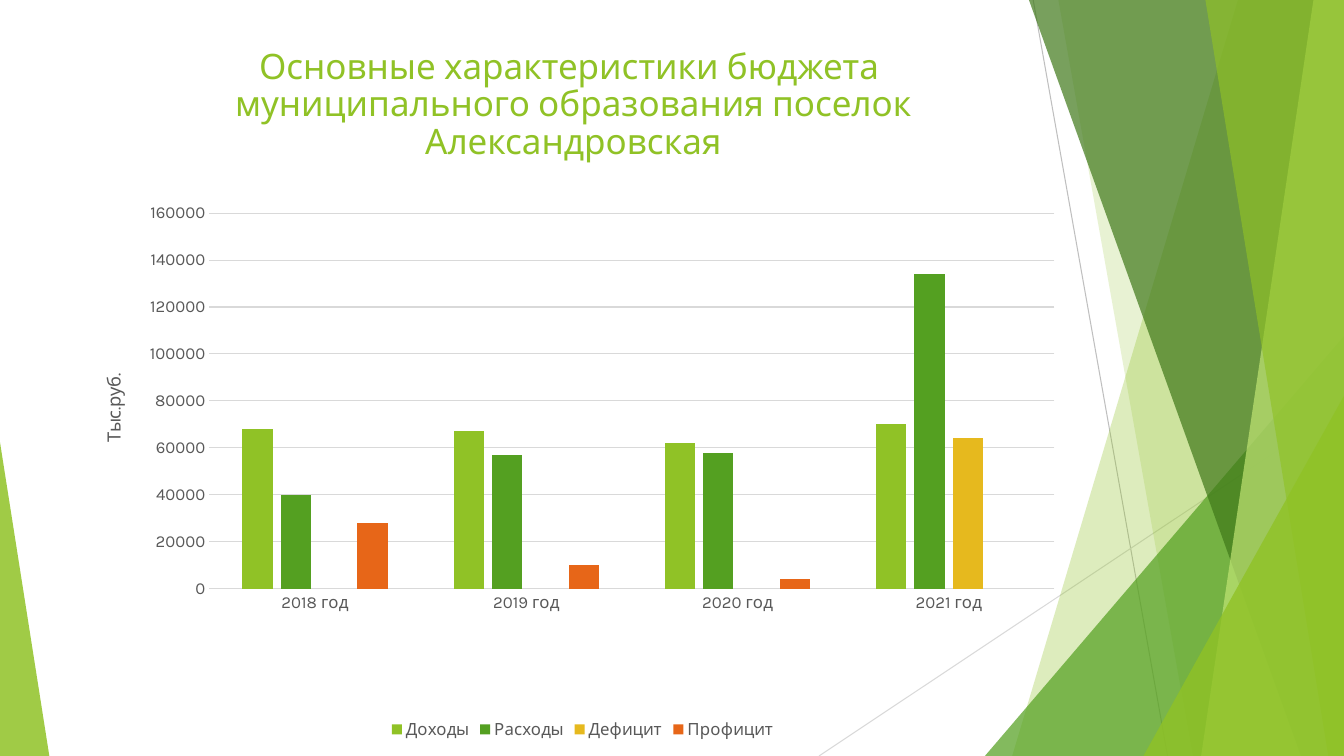
from lxml import etree
from pptx import Presentation
from pptx.chart.data import CategoryChartData
from pptx.dml.color import RGBColor
from pptx.enum import chart as ch, shapes, text
from pptx.oxml import parse_xml
from pptx.oxml.ns import nsdecls, qn
from pptx import util as u

PX = 9525
WIDE, HIGH = 1280, 720
FONT = "Karla"
LIME = RGBColor(0x90, 0xC2, 0x26)
GREEN = RGBColor(0x54, 0xA0, 0x21)
DARK = RGBColor(0x3F, 0x78, 0x19)
PALE = RGBColor(0xC0, 0xE4, 0x74)
GOLD = RGBColor(0xE6, 0xB9, 0x1E)
RUST = RGBColor(0xE7, 0x66, 0x18)
INK = RGBColor(0x59, 0x59, 0x59)
RULE = RGBColor(0xD9, 0xD9, 0xD9)
GREY = RGBColor(0xBF, 0xBF, 0xBF)


def paint(shape, color, alpha):
    """Fill the shape with a colour at alpha percent opacity, without a line."""
    shape.shadow.inherit = False
    shape.line.fill.background()
    shape.fill.solid()
    shape.fill.fore_color.rgb = color
    tone = shape.fill._xPr.find(qn("a:solidFill"))[0]
    etree.SubElement(tone, qn("a:alpha"), val=str(alpha * 1000))


def style(font, size, color):
    for key, value in {"name": FONT, "size": u.Pt(size), "bold": False}.items():
        setattr(font, key, value)
    font.color.rgb = color


deck = Presentation()
deck.slide_width, deck.slide_height = WIDE * PX, HIGH * PX
slide = deck.slides.add_slide(deck.slide_layouts[6])
art = slide.shapes

# Thin lines behind the facets
for ends, color in [((984, 0, 1112, 720), GREY), ((1280, 387, 780, 720), RULE)]:
    line = art.add_connector(shapes.MSO_CONNECTOR.STRAIGHT, *[n * PX for n in ends])
    line.line.color.rgb = color
    line.line.width = u.Pt(0.75)
    etree.SubElement(line._element.spPr, qn("a:effectLst"))

# Facets: a band has a top and a bottom x and runs to the right edge;
# a triangle has a box and the place of its tip
facets = [
    ("band", (1179, 964), LIME, 30),
    ("band", (1008, 1136), LIME, 20),
    ("tri", (938, 320, 342, 400, 1), GREEN, 72),
    ("band", (980, 1239), DARK, 70),
    ("band", (1251, 1144), PALE, 70),
    ("band", (1148, 1265), LIME, 65),
    ("tri", (1089, 377, 191, 343, 1), LIME, 80),
    ("tri", (0, 421, 47, 299, 0), LIME, 85),
]
for kind, place, color, alpha in facets:
    if kind == "band":
        top, base = place
        form = art.build_freeform(top, 0, scale=PX)
        form.add_line_segments([(WIDE, 0), (WIDE, HIGH), (base, HIGH)])
        facet = form.convert_to_shape()
    else:
        *box, tip = place
        facet = art.add_shape(shapes.MSO_SHAPE.ISOSCELES_TRIANGLE,
                              *[n * PX for n in box])
        facet.adjustments[0] = tip
    paint(facet, color, alpha)

# Title
head = art.add_textbox(*[n * PX for n in (78, 33, 936, 135)])
frame = head.text_frame
frame.word_wrap = True
frame.vertical_anchor = text.MSO_ANCHOR.MIDDLE
para = frame.paragraphs[0]
para.text = ("Основные характеристики бюджета \v"
             "муниципального образования поселок Александровская")
para.alignment = text.PP_ALIGN.CENTER
para.line_spacing = 0.9
for run in para.runs:
    style(run.font, 25, LIME)

# Chart
series = [
    ("Доходы", (68000, 67000, 62000, 70000), LIME),
    ("Расходы", (40000, 57000, 58000, 134000), GREEN),
    ("Дефицит", (None, None, None, 64000), GOLD),
    ("Профицит", (28000, 10000, 4000, None), RUST),
]
data = CategoryChartData()
data.categories = [f"{year} год" for year in range(2018, 2022)]
for name, values, _ in series:
    data.add_series(name, values)
chart = art.add_chart(ch.XL_CHART_TYPE.COLUMN_CLUSTERED,
                      *[n * PX for n in (87, 182, 936, 526)], data).chart
style(chart.font, 12, INK)
chart.has_title = False

plot = chart.plots[0]
for key, value in {"gap_width": 219, "overlap": -27, "vary_by_categories": False}.items():
    setattr(plot, key, value)
for bars, (_, _, color) in zip(plot.series, series):
    bars.invert_if_negative = False
    bars.format.fill.solid()
    bars.format.fill.fore_color.rgb = color

years, money = chart.category_axis, chart.value_axis
for axis in (years, money):
    axis.major_tick_mark = axis.minor_tick_mark = ch.XL_TICK_MARK.NONE
    style(axis.tick_labels.font, 12, INK)
for key, value in {"minimum_scale": 0, "maximum_scale": 160000, "major_unit": 20000,
                   "has_major_gridlines": True}.items():
    setattr(money, key, value)
for rule in (years.format.line, money.major_gridlines.format.line):
    rule.color.rgb = RULE
    rule.width = u.Pt(0.75)
money.format.line.fill.background()
label = money.axis_title.text_frame
label.text = "Тыс.руб."
style(label.paragraphs[0].runs[0].font, 13, INK)

chart.has_legend = True
legend = chart.legend
legend.position = ch.XL_LEGEND_POSITION.BOTTOM
legend.include_in_layout = False
style(legend.font, 12, INK)

sides = {"x": 0.12, "y": 0.04, "w": 0.86, "h": 0.68}
parts = "".join(f'<c:{key} val="{value}"/>' for key, value in sides.items())
area = chart._chartSpace.chart.plotArea
for old in area.findall(qn("c:layout")):
    area.remove(old)
area.insert(0, parse_xml(
    f'<c:layout {nsdecls("c")}><c:manualLayout><c:layoutTarget val="inner"/>'
    f'<c:xMode val="edge"/><c:yMode val="edge"/>{parts}</c:manualLayout></c:layout>'))

deck.save("out.pptx")
